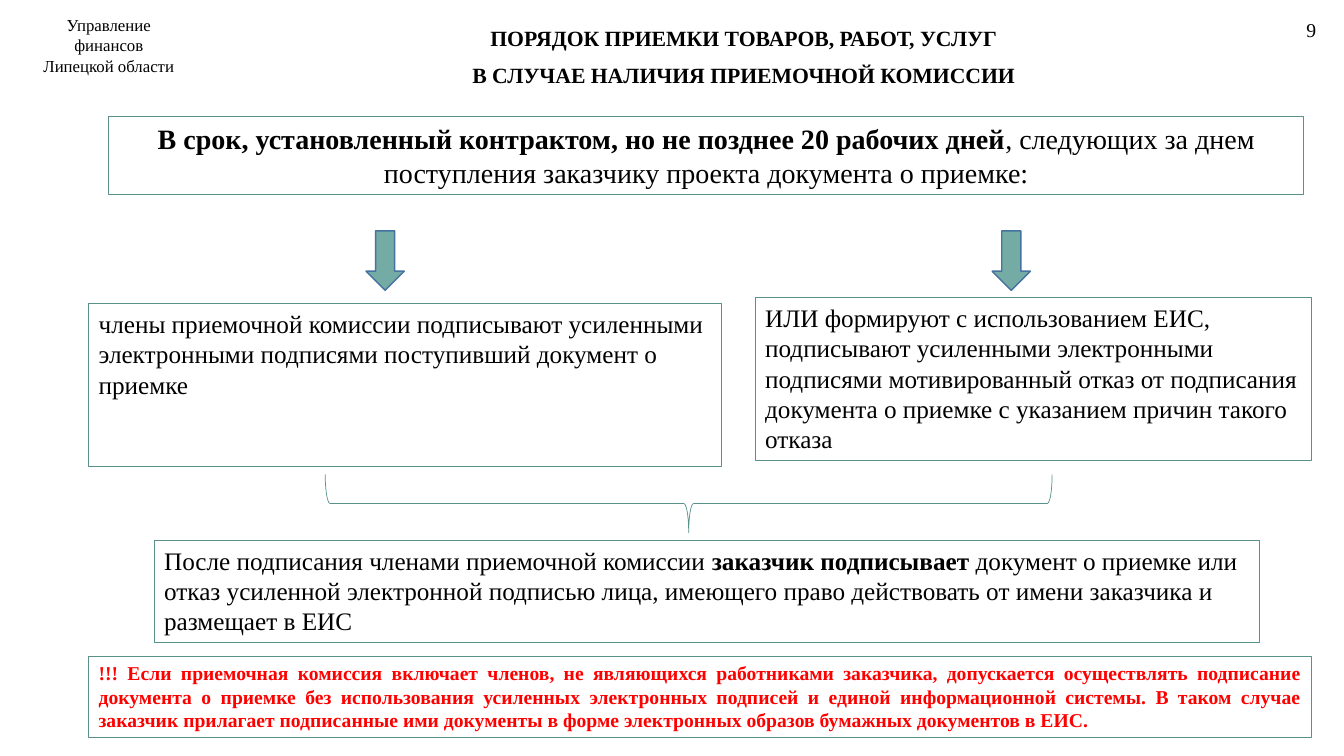
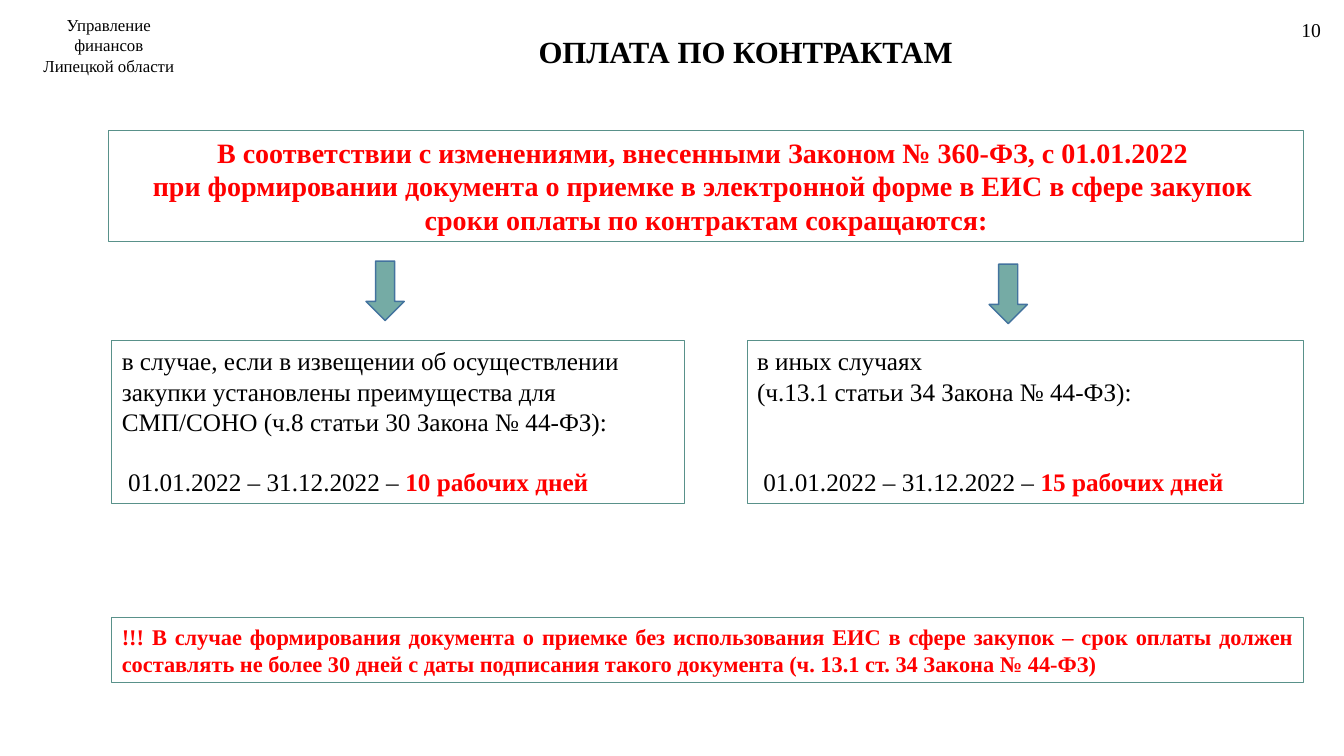
from pptx import Presentation
from pptx.dml.color import RGBColor
from pptx.enum.shapes import MSO_SHAPE
from pptx.enum.text import MSO_ANCHOR, MSO_AUTO_SIZE, PP_ALIGN
from pptx.util import Inches, Pt

RECT, ARROW, BRACE = MSO_SHAPE.RECTANGLE, MSO_SHAPE.DOWN_ARROW, MSO_SHAPE.RIGHT_BRACE
LEFT, CENTER, JUSTIFY = PP_ALIGN.LEFT, PP_ALIGN.CENTER, PP_ALIGN.JUSTIFY
TOP, MIDDLE = MSO_ANCHOR.TOP, MSO_ANCHOR.MIDDLE
NO_FIT = MSO_AUTO_SIZE.NONE
TITLE_ONLY = 5

FONT = "Times New Roman"
BLACK, RED = "000000", "FF0000"
TEAL, MINT, BLUE = "59918A", "75ABA5", "43739E"
OWNER = "Управление финансов Липецкой области"
PERIOD = " 01.01.2022 – 31.12.2022 – "


def rgb(code):
    return RGBColor.from_string(code)


def place(*sides):
    return [Inches(side) for side in sides]


class Deck:
    def __init__(self):
        self.prs = Presentation()
        self.prs.slide_width, self.prs.slide_height = place(13.33, 7.5)
        self.slide = None

    def page(self, number, title, at, size):
        """Start a slide with its title, owner and page number."""
        layout = self.prs.slide_layouts[TITLE_ONLY]
        self.slide = self.prs.slides.add_slide(layout)
        head = self.slide.shapes.title
        head.left, head.top, head.width, head.height = place(*at)
        self.text(head.text_frame, title, size, CENTER, MIDDLE, bold=True, gap=8)
        self.label((0.3, 0.1, 1.56, 0.71), OWNER, 12)
        self.label((12.79, 0.13, 0.43, 0.34), str(number), 14)

    def text(self, frame, paras, size, align=LEFT, anchor=TOP,
             hue=BLACK, bold=False, gap=0):
        """Fill a frame; a paragraph is a string or a list of (text, bold, hue).

        The gap, in points, goes above the last paragraph.
        """
        frame.word_wrap = True
        frame.auto_size = NO_FIT
        frame.vertical_anchor = anchor
        for i, para in enumerate(paras):
            p = frame.add_paragraph() if i else frame.paragraphs[0]
            p.alignment = align
            p.space_before = Pt(gap if i and i == len(paras) - 1 else 0)
            runs = [(para, bold, hue)] if isinstance(para, str) else para
            for words, strong, tint in runs:
                run = p.add_run()
                run.text = words
                run.font.name, run.font.size = FONT, Pt(size)
                run.font.bold = strong
                run.font.color.rgb = rgb(tint)

    def label(self, at, words, size):
        box = self.slide.shapes.add_textbox(*place(*at))
        self.text(box.text_frame, [words], size, CENTER)

    def shape(self, kind, at, line=TEAL, width=0.75, fill=None):
        item = self.slide.shapes.add_shape(kind, *place(*at))
        item.shadow.inherit = False
        item.line.color.rgb = rgb(line)
        item.line.width = Pt(width)
        if fill:
            item.fill.solid()
            item.fill.fore_color.rgb = rgb(fill)
        else:
            item.fill.background()
        return item

    def box(self, at, paras, size=18, **style):
        self.text(self.shape(RECT, at).text_frame, paras, size, **style)

    def lead(self, top, height, paras, **style):
        self.box((1.08, top, 11.85, height), paras, 20, align=CENTER, **style)

    def note(self, at, words, size):
        self.box(at, [words], size, align=JUSTIFY, hue=RED, bold=True)

    def arrow(self, left, top):
        self.shape(ARROW, (left, top, 0.38, 0.59), BLUE, 1, MINT)

    def brace(self, at):
        """Draw a brace that opens upwards; at is its place before turning."""
        self.shape(BRACE, at, width=0.5).rotation = 90


def accept(deck):
    deck.page(9, ["ПОРЯДОК ПРИЕМКИ ТОВАРОВ, РАБОТ, УСЛУГ",
                  "В СЛУЧАЕ НАЛИЧИЯ ПРИЕМОЧНОЙ КОМИССИИ"],
              (2.08, 0.18, 10.59, 0.76), 15.5)
    deck.lead(1.16, 0.77, [[
        ("В срок, установленный контрактом, но не позднее 20 рабочих дней", True, BLACK),
        (", следующих за днем поступления заказчику проекта документа о приемке:",
         False, BLACK)]])
    for left in (3.63, 9.84):
        deck.arrow(left, 2.29)
    deck.box((0.88, 3.01, 6.28, 1.62), [
        "члены приемочной комиссии подписывают усиленными электронными "
        "подписями поступивший документ о приемке"])
    deck.box((7.49, 2.95, 5.52, 1.62), [
        "ИЛИ формируют с использованием ЕИС, подписывают усиленными "
        "электронными подписями мотивированный отказ от подписания",
        "документа о приемке с указанием причин такого отказа"])
    deck.brace((6.54, 1.39, 0.58, 7.21))
    deck.box((1.53, 5.36, 10.96, 1.01), [[
        ("После подписания членами приемочной комиссии ", False, BLACK),
        ("заказчик подписывает", True, BLACK),
        (" документ о приемке или отказ усиленной электронной подписью лица, "
         "имеющего право действовать от имени заказчика и размещает в ЕИС",
         False, BLACK)]])
    deck.note((0.88, 6.51, 12.13, 0.81),
              "!!! Если приемочная комиссия включает членов, не являющихся "
              "работниками заказчика, допускается осуществлять подписание "
              "документа о приемке без использования усиленных электронных "
              "подписей и единой информационной системы. В таком случае "
              "заказчик прилагает подписанные ими документы в форме "
              "электронных образов бумажных документов в ЕИС.", 14)


def pay(deck):
    deck.page(10, ["ОПЛАТА ПО КОНТРАКТАМ"], (2.43, 0.28, 9.93, 0.46), 22)
    deck.lead(1.29, 1.11, [
        "В соответствии с изменениями, внесенными Законом № 360-ФЗ, с 01.01.2022 ",
        "при формировании документа о приемке в электронной форме в ЕИС в сфере закупок ",
        "сроки оплаты по контрактам сокращаются:"], hue=RED, bold=True)
    deck.arrow(3.63, 2.59)
    deck.arrow(9.81, 2.62)
    cases = [
        (1.11, 5.68, 10, 21.6, [
            "в случае, если в извещении об осуществлении закупки установлены "
            "преимущества для СМП/СОНО (ч.8 статьи 30 Закона № 44-ФЗ):"]),
        (7.41, 5.52, 15, 43.2, [
            "в иных случаях", "(ч.13.1 статьи 34 Закона № 44-ФЗ):"]),
    ]
    for left, width, days, gap, paras in cases:
        term = [(PERIOD, False, BLACK), (f"{days} рабочих дней", True, RED)]
        deck.box((left, 3.38, width, 1.62), paras + [term], gap=gap)
    deck.note((1.11, 6.13, 11.82, 0.64),
              "!!! В случае формирования документа о приемке без использования "
              "ЕИС в сфере закупок – срок оплаты должен составлять не более "
              "30 дней с даты подписания такого документа "
              "(ч. 13.1 ст. 34 Закона № 44-ФЗ)", 16)


def main():
    deck = Deck()
    accept(deck)
    pay(deck)
    deck.prs.save("out.pptx")


if __name__ == "__main__":
    main()
